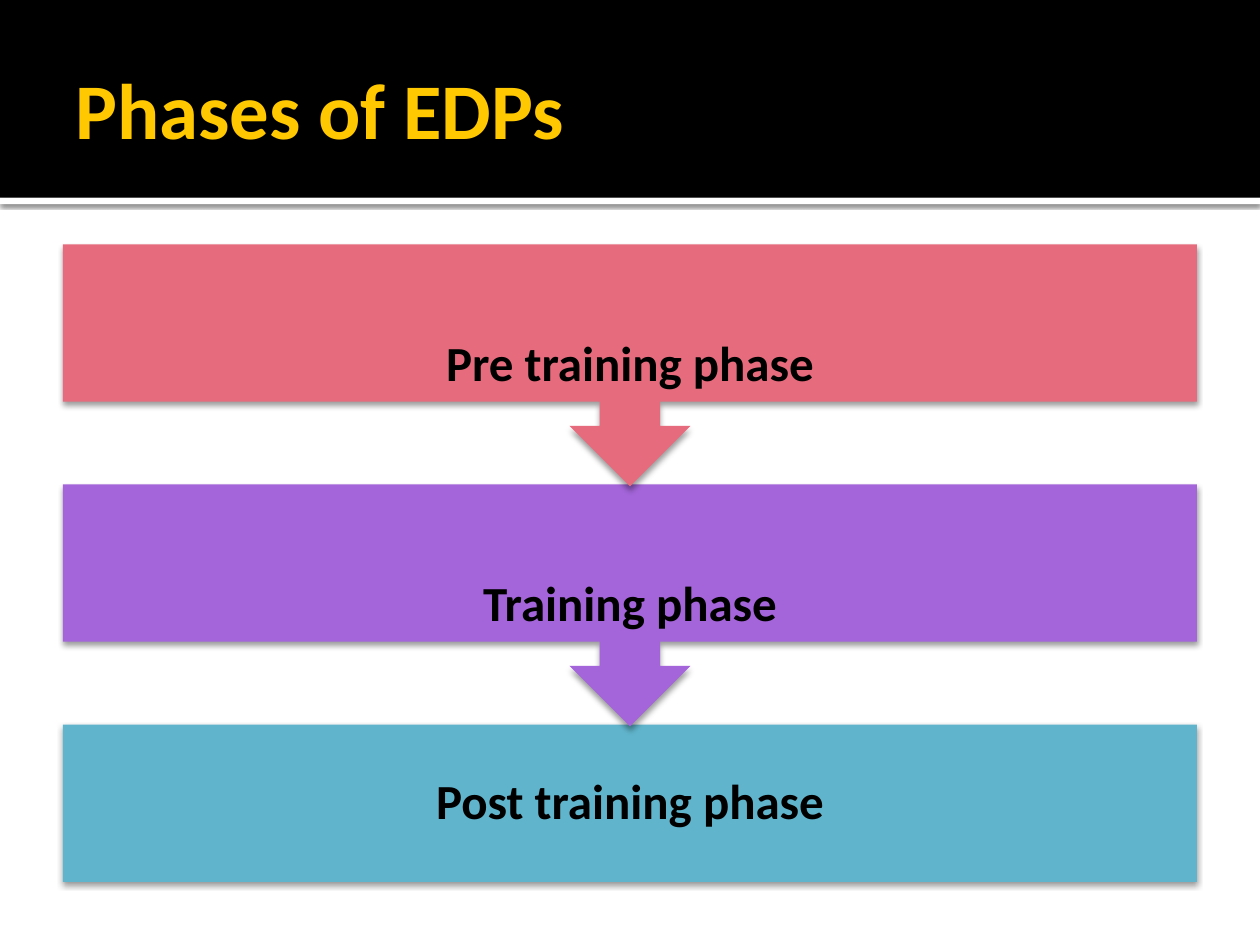
from dataclasses import dataclass

from lxml import etree
from pptx import Presentation
from pptx.dml.color import RGBColor
from pptx.enum.shapes import MSO_SHAPE
from pptx.enum.text import MSO_ANCHOR, PP_ALIGN
from pptx.oxml.ns import qn
from pptx.util import Inches, Pt

RECT = MSO_SHAPE.RECTANGLE
CALL = MSO_SHAPE.DOWN_ARROW_CALLOUT
MID = MSO_ANCHOR.MIDDLE
LEFT = PP_ALIGN.LEFT
CENTER = PP_ALIGN.CENTER

WIDE, HIGH = 10, 7.5
SIDE = WIDE * 0.05
SPAN = WIDE - 2 * SIDE
HEAD = 1.57
TOP = 1.94
STEP = 1.905
TALL = 1.92
LAST = 1.25


@dataclass
class Phase:
    text: str
    fill: str


@dataclass
class Box:
    left: float
    top: float
    width: float
    height: float

    def emu(self) -> list:
        return [Inches(n) for n in (self.left, self.top, self.width, self.height)]


@dataclass
class Shade:
    alpha: int
    blur: float
    dist: float


PHASES = [
    Phase("Pre training phase", "E66C7D"),
    Phase("Training phase", "A465DA"),
    Phase("Post training phase", "60B5CC"),
]


def color(code: str) -> RGBColor:
    return RGBColor.from_string(code)


def cast(shape, shade: Shade) -> None:
    group = shape._element.spPr.find(qn("a:effectLst"))
    outer = etree.SubElement(
        group, qn("a:outerShdw"), blurRad=str(Pt(shade.blur)),
        dist=str(Pt(shade.dist)), dir="5400000", algn="ctr", rotWithShape="0")
    tint = etree.SubElement(outer, qn("a:srgbClr"), val="000000")
    etree.SubElement(tint, qn("a:alpha"), val=str(shade.alpha * 1000))


def block(slide, kind, box: Box, fill: str, shade: Shade | None = None) -> None:
    shape = slide.shapes.add_shape(kind, *box.emu())
    shape.shadow.inherit = False
    shape.fill.solid()
    shape.fill.fore_color.rgb = color(fill)
    shape.line.fill.background()
    if shade:
        cast(shape, shade)


def label(slide, text: str, box: Box, size: int, ink: str, align,
          pads: tuple, lead: float = 1.0) -> None:
    frame = slide.shapes.add_textbox(*box.emu()).text_frame
    frame.word_wrap = True
    frame.vertical_anchor = MID
    (frame.margin_left, frame.margin_top,
     frame.margin_right, frame.margin_bottom) = [Inches(n) for n in pads]
    frame.text = text
    para = frame.paragraphs[0]
    para.alignment = align
    para.line_spacing = lead
    font = para.runs[0].font
    font.name = "Calibri"
    font.size = Pt(size)
    font.bold = True
    font.color.rgb = color(ink)


def main() -> None:
    deck = Presentation()
    deck.slide_width, deck.slide_height = Inches(WIDE), Inches(HIGH)
    slide = deck.slides.add_slide(deck.slide_layouts[6])

    block(slide, RECT, Box(0, HEAD, WIDE, 0.05), "FFFFFF", Shade(60, 2.5, 0.8))
    block(slide, RECT, Box(0, 0, WIDE, HEAD), "000000")
    label(slide, "Phases of EDPs", Box(SIDE, 0.17, SPAN, 1.37), 45,
          "FFC800", LEFT, (0.1, 0.05, 0.05, 0.05))

    end = len(PHASES) - 1
    for row, phase in reversed(list(enumerate(PHASES))):
        kind, tall = (RECT, LAST) if row == end else (CALL, TALL)
        box = Box(SIDE, TOP + row * STEP, SPAN, tall)
        block(slide, kind, box, phase.fill, Shade(38, 3.1, 2))
        label(slide, phase.text, box, 28, "000000", CENTER, (0.22,) * 4, 0.9)

    deck.save("out.pptx")


if __name__ == "__main__":
    main()
